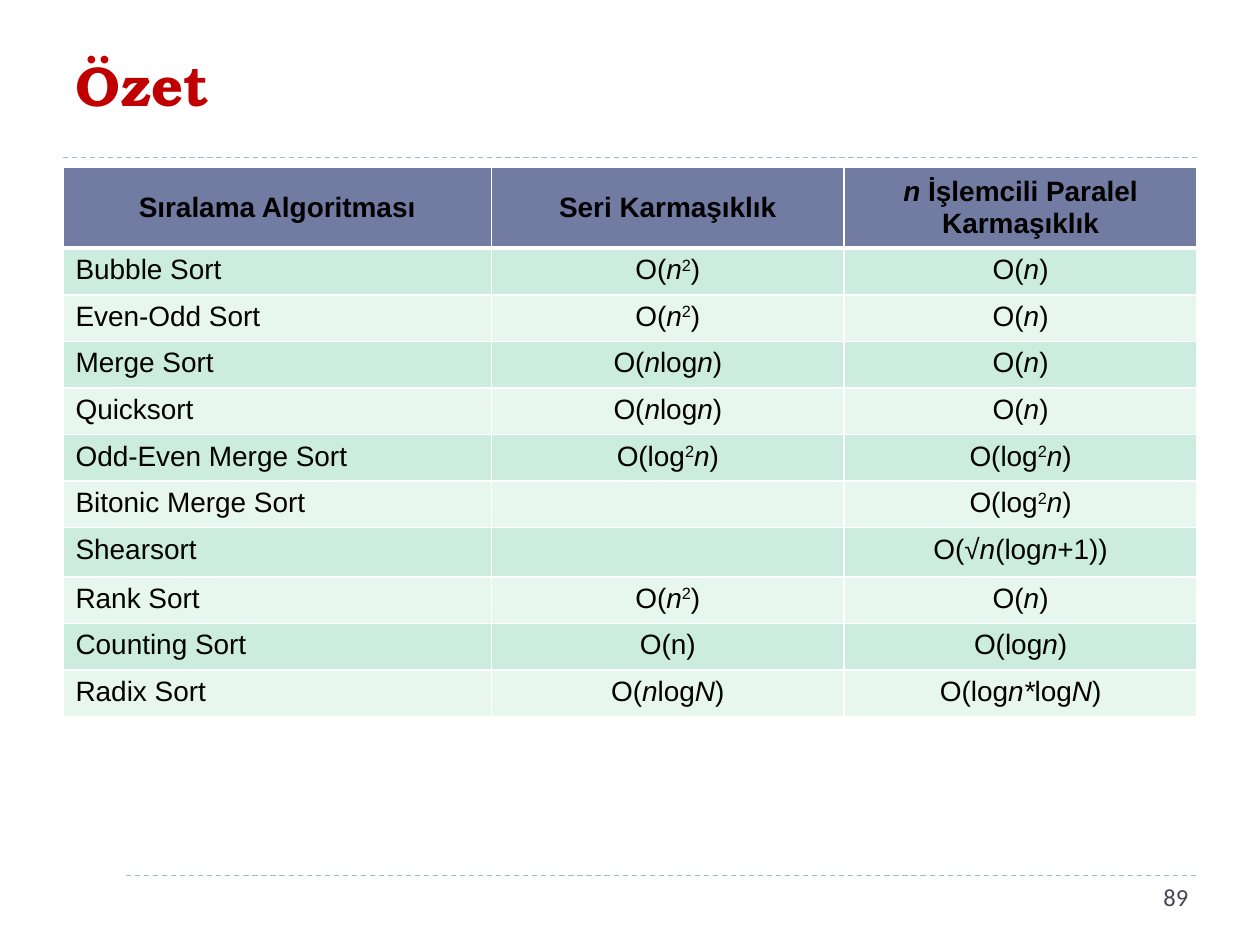
"""Build the summary slide comparing sorting algorithm complexities."""
from lxml import etree
from pptx import Presentation
from pptx.dml.color import RGBColor
from pptx.enum import dml, shapes, text
from pptx.oxml import ns
from pptx.util import Inches, Pt


def style(r, size, font, color, bold=False):
    r.font.size, r.font.name, r.font.bold = Pt(size), font, bold
    r.font.color.rgb = RGBColor.from_string(color)


def border(tc_pr, side, width):
    ln = etree.SubElement(tc_pr, ns.qn(f"a:ln{side}"), w=str(Pt(width)))
    fill = etree.SubElement(ln, ns.qn("a:solidFill"))
    etree.SubElement(fill, ns.qn("a:srgbClr"), val="FFFFFF")


prs = Presentation()
prs.slide_width, prs.slide_height = Inches(10), Inches(7.5)
s = prs.slides.add_slide(prs.slide_layouts[6])

for left, y in [(1, 6.95), (0.5, 1.25)]:
    rule = s.shapes.add_connector(
        shapes.MSO_CONNECTOR.STRAIGHT, Inches(left), Inches(y), Inches(9.5), Inches(y))
    rule.line.color.rgb = RGBColor.from_string("9FB8CD")
    rule.line.width = Pt(0.75)
    rule.line.dash_style = dml.MSO_LINE.DASH
    etree.SubElement(rule.element.spPr, ns.qn("a:effectLst"))

LEFT, CENTER, RIGHT = text.PP_ALIGN.LEFT, text.PP_ALIGN.CENTER, text.PP_ALIGN.RIGHT
TOP, MIDDLE = text.MSO_ANCHOR.TOP, text.MSO_ANCHOR.MIDDLE
boxes = [
    ("Özet", (0.5, 0.13, 9, 1.08), LEFT, MIDDLE, (32, "TeX Gyre Bonum", "C00000", True)),
    ("89", (7.2, 6.95, 2.33, 0.4), RIGHT, TOP, (14, "Calibri", "464653")),
]
for words, place, align, anchor, look in boxes:
    tf = s.shapes.add_textbox(*map(Inches, place)).text_frame
    tf.word_wrap, tf.vertical_anchor = True, anchor
    tf.text = words
    p = tf.paragraphs[0]
    p.alignment = align
    style(p.runs[0], *look)

# Markup: _italic_ and ^superscript^
rows = [
    ("Sıralama Algoritması", "Seri Karmaşıklık", "_n _İşlemcili Paralel\nKarmaşıklık"),
    ("Bubble Sort", "O(_n_^2^)", "O(_n_)"),
    ("Even-Odd Sort", "O(_n_^2^)", "O(_n_)"),
    ("Merge Sort", "O(_n_log_n_)", "O(_n_)"),
    ("Quicksort", "O(_n_log_n_)", "O(_n_)"),
    ("Odd-Even Merge Sort", "O(log^2^_n_)", "O(log^2^_n_)"),
    ("Bitonic Merge Sort", "", "O(log^2^_n_)"),
    ("Shearsort", "", "O(√_n_(log_n_+1))"),
    ("Rank Sort", "O(_n_^2^)", "O(_n_)"),
    ("Counting Sort", "O(n)", "O(log_n_)"),
    ("Radix Sort", "O(_n_log_N_)", "O(log_n*_log_N_)"),
]
heights = [0.64] + [0.37] * 10
heights[7] = 0.39
table = s.shapes.add_table(
    len(rows), 3, Inches(0.5), Inches(1.33), Inches(9), Inches(sum(heights))).table
for column, width in zip(table.columns, (3.4, 2.8, 2.8)):
    column.width = Inches(width)

for i, row in enumerate(rows):
    table.rows[i].height = Inches(heights[i])
    for j, markup in enumerate(row):
        cell = table.cell(i, j)
        cell.vertical_anchor = TOP if i else MIDDLE
        tc_pr = cell._tc.get_or_add_tcPr()
        widths = {"L": 1, "R": 1, "T": 3 if i == 1 else 1, "B": 1 if i else 3}
        for side, width in widths.items():
            border(tc_pr, side, width)
        cell.fill.solid()
        cell.fill.fore_color.rgb = RGBColor.from_string(
            "727CA3" if i == 0 else "CBECDE" if i % 2 else "E7F6EF")
        p = cell.text_frame.paragraphs[0]
        p.alignment = LEFT if i and j == 0 else CENTER
        for k, part in enumerate(markup.split("_")):
            for m, piece in enumerate(part.split("^")):
                for n, line in enumerate(piece.split("\n")):
                    if n:
                        p.add_line_break()
                    if line:
                        r = p.add_run()
                        r.text = line
                        style(r, 16, "Arial", "000000", i == 0)
                        r.font.italic = k % 2 == 1
                        if m % 2:
                            r.font._element.set("baseline", "30000")
        etree.SubElement(p._p, ns.qn("a:endParaRPr"), sz="1600")

prs.save("out.pptx")
